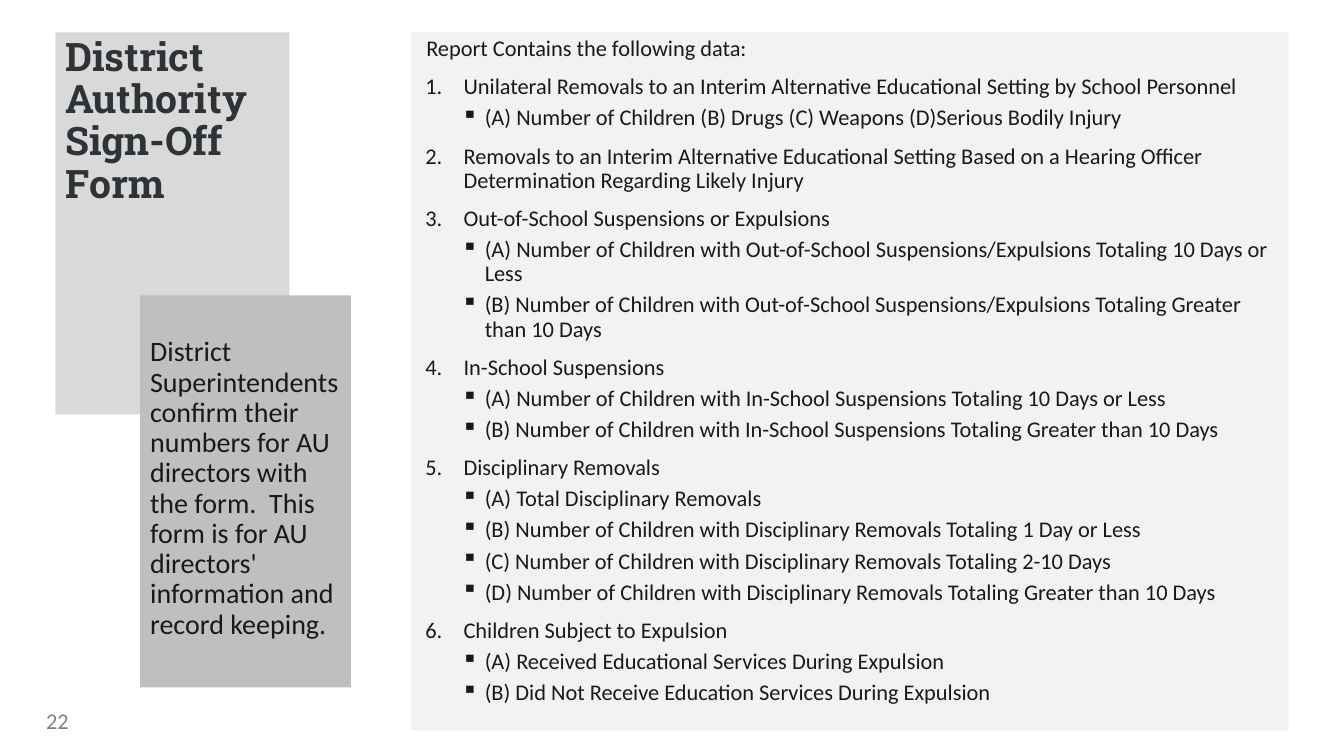
"""Build the District Authority Sign-Off Form slide."""
from lxml.etree import SubElement
from pptx import Presentation
from pptx.dml.color import RGBColor
from pptx.enum.shapes import MSO_SHAPE
from pptx.enum.text import MSO_ANCHOR, PP_ALIGN
from pptx.oxml.ns import qn
from pptx.util import Pt

TITLE = "District Authority Sign-Off Form"
NOTE = (
    "District Superintendents confirm their numbers for AU directors with the form.  "
    "This form is for AU directors' information and record keeping."
)
PAGE_NUMBER = "22"
INTRO = "Report Contains the following data:"
SECTIONS = [
    ("Unilateral Removals to an Interim Alternative Educational Setting by School Personnel",
     ["(A) Number of Children (B) Drugs (C) Weapons (D)Serious Bodily Injury"]),
    ("Removals to an Interim Alternative Educational Setting Based on a Hearing Officer "
     "Determination Regarding Likely Injury", []),
    ("Out-of-School Suspensions or Expulsions",
     ["(A) Number of Children with Out-of-School Suspensions/Expulsions Totaling 10 Days or Less",
      "(B) Number of Children with Out-of-School Suspensions/Expulsions Totaling Greater "
      "than 10 Days"]),
    ("In-School Suspensions",
     ["(A) Number of Children with In-School Suspensions Totaling 10 Days or Less",
      "(B) Number of Children with In-School Suspensions Totaling Greater than 10 Days"]),
    ("Disciplinary Removals",
     ["(A) Total Disciplinary Removals",
      "(B) Number of Children with Disciplinary Removals Totaling 1 Day or Less",
      "(C) Number of Children with Disciplinary Removals Totaling 2-10 Days",
      "(D) Number of Children with Disciplinary Removals Totaling Greater than 10 Days"]),
    ("Children Subject to Expulsion",
     ["(A) Received Educational Services During Expulsion",
      "(B) Did Not Receive Education Services During Expulsion"]),
]
COLORS = {
    "title_panel": "D9D9D9", "report_panel": "F2F2F2", "note_panel": "BFBFBF",
    "title": "2E3337", "body": "171A1C", "number": "808080",
}
PX = 9144


def px(length):
    """Turn px into EMU at 100 px to the inch."""
    return length * PX


def add_panel(page, left, top, width, height, fill=None, anchor=MSO_ANCHOR.TOP, inset_top=5):
    """Add a wrapped text area, filled when a colour is given."""
    place = [px(length) for length in (left, top, width, height)]
    if fill:
        box = page.shapes.add_shape(MSO_SHAPE.RECTANGLE, *place)
        box.shadow.inherit = False
        box.fill.solid()
        box.fill.fore_color.rgb = RGBColor.from_string(COLORS[fill])
        box.line.fill.background()
    else:
        box = page.shapes.add_textbox(*place)
    frame = box.text_frame
    frame.word_wrap = True
    frame.vertical_anchor = anchor
    frame.margin_left = frame.margin_right = px(10)
    frame.margin_top, frame.margin_bottom = px(inset_top), px(5)
    return frame


def write(frame, text, size=16, color="body", font="Calibri", bold=False, spacing=0.9,
          before=0, level=0, margin=0, indent=0, bullet=None):
    """Write one formatted paragraph into a text frame."""
    first = frame.paragraphs[0]
    para = frame.add_paragraph() if first.runs else first
    para.alignment = PP_ALIGN.LEFT
    para.level = level
    para.line_spacing = spacing
    para.space_before = Pt(before)
    properties = para._p.get_or_add_pPr()
    properties.set("marL", str(px(margin)))
    properties.set("indent", str(px(indent)))
    if bullet:
        tag, attributes = bullet
        SubElement(properties, qn(tag), attributes)
    span = para.add_run()
    span.text = text
    span.font.name, span.font.size, span.font.bold = font, Pt(size), bold
    span.font.color.rgb = RGBColor.from_string(COLORS[color])


def main():
    """Lay out the panels and save the deck."""
    deck = Presentation()
    deck.slide_width, deck.slide_height = px(1333), px(750)
    page = deck.slides.add_slide(deck.slide_layouts[6])

    title = add_panel(page, 55, 32, 232, 379, "title_panel")
    write(title, TITLE, size=28, color="title", font="Roboto Slab", bold=True)

    report = add_panel(page, 408, 32, 870, 693, "report_panel")
    write(report, INTRO, margin=5)
    number = ("a:buAutoNum", {"type": "arabicPeriod"})
    square = ("a:buChar", {"char": "▪"})
    for heading, details in SECTIONS:
        write(report, heading, before=10, margin=42, indent=-38, bullet=number)
        for detail in details:
            write(report, detail, before=5, level=1, margin=63, indent=-23, bullet=square)

    note = add_panel(page, 139, 293, 209, 389, "note_panel", MSO_ANCHOR.MIDDLE, inset_top=0)
    write(note, NOTE, size=20)

    footer = add_panel(page, 36, 695, 300, 40, anchor=MSO_ANCHOR.MIDDLE)
    write(footer, PAGE_NUMBER, color="number", spacing=1.0)
    deck.save("out.pptx")


if __name__ == "__main__":
    main()
